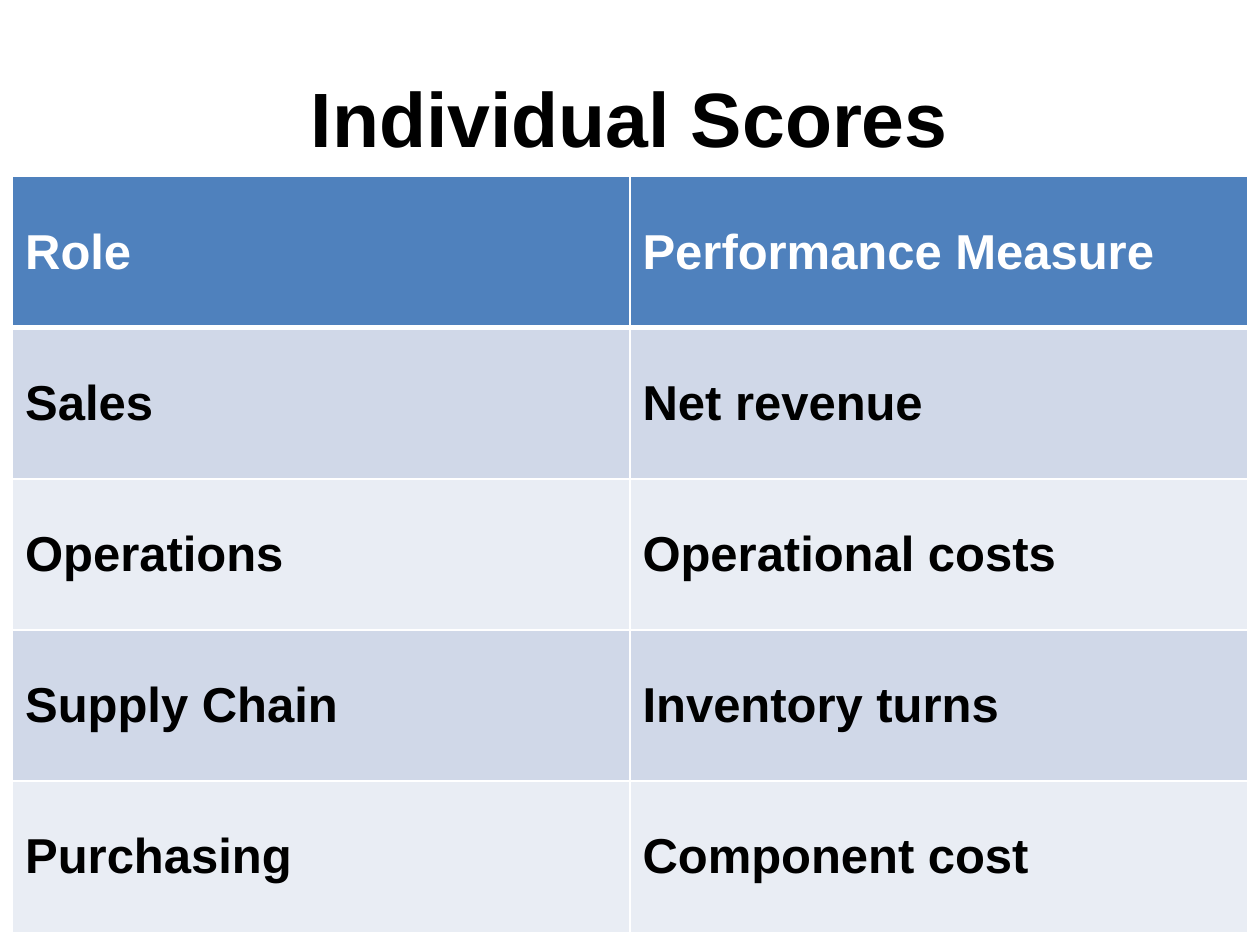
from dataclasses import dataclass

from lxml.etree import SubElement
from pptx import Presentation
from pptx.dml.color import RGBColor
from pptx.enum.text import MSO_ANCHOR, PP_ALIGN
from pptx.oxml.ns import qn
from pptx.util import Inches, Pt

SLIDE_WIDTH, SLIDE_HEIGHT = Inches(10), Inches(7.5)
FONT = "Arial"
WHITE, BLACK = "FFFFFF", "000000"


@dataclass(frozen=True)
class RowStyle:
    fill: str
    text: str
    bottom_border: float = 1
    top_border: float = 1


@dataclass(frozen=True)
class Score:
    role: str
    measure: str


HEADER = RowStyle("4F81BD", WHITE, bottom_border=3)
BANDS = (RowStyle("D0D8E8", BLACK), RowStyle("E9EDF4", BLACK))
SCORES = (
    Score("Role", "Performance Measure"),
    Score("Sales", "Net revenue"),
    Score("Operations", "Operational costs"),
    Score("Supply Chain", "Inventory turns"),
    Score("Purchasing", "Component cost"),
)


def color(hex_string: str) -> RGBColor:
    return RGBColor.from_string(hex_string)


def add_run(paragraph, text: str, size: float, text_color: str) -> None:
    run = paragraph.add_run()
    run.text = text
    run.font.name = FONT
    run.font.size = Pt(size)
    run.font.bold = True
    run.font.color.rgb = color(text_color)


def set_borders(cell, top: float, bottom: float) -> None:
    properties = cell._tc.get_or_add_tcPr()
    for side, width in (("L", 1), ("R", 1), ("T", top), ("B", bottom)):
        line = SubElement(properties, qn(f"a:ln{side}"), w=str(int(Pt(width))))
        fill = SubElement(line, qn("a:solidFill"))
        SubElement(fill, qn("a:srgbClr"), val=WHITE)


def fill_cell(cell, text: str, style: RowStyle, top: float) -> None:
    set_borders(cell, top, style.bottom_border)
    cell.fill.solid()
    cell.fill.fore_color.rgb = color(style.fill)
    cell.vertical_anchor = MSO_ANCHOR.MIDDLE
    add_run(cell.text_frame.paragraphs[0], text, 28, style.text)


def add_heading(slide, text: str) -> None:
    heading = slide.shapes.title
    heading.left, heading.top = int(SLIDE_WIDTH * 0.05), int(SLIDE_HEIGHT * 0.04)
    heading.width, heading.height = int(SLIDE_WIDTH * 0.9), Inches(1.25)
    heading.text_frame.vertical_anchor = MSO_ANCHOR.MIDDLE
    paragraph = heading.text_frame.paragraphs[0]
    paragraph.alignment = PP_ALIGN.CENTER
    add_run(paragraph, text, 44, BLACK)


def add_scores(slide) -> None:
    margin = int(SLIDE_WIDTH * 0.01)
    scores = slide.shapes.add_table(
        len(SCORES), 2, margin, Inches(1.4),
        SLIDE_WIDTH - 2 * margin, int(SLIDE_HEIGHT * 0.8),
    ).table
    top = HEADER.top_border
    for row, score in enumerate(SCORES):
        style = BANDS[(row - 1) % len(BANDS)] if row else HEADER
        for column, text in enumerate((score.role, score.measure)):
            fill_cell(scores.cell(row, column), text, style, top)
        # Neighbouring rows share one border
        top = style.bottom_border


def main() -> None:
    deck = Presentation()
    deck.slide_width, deck.slide_height = SLIDE_WIDTH, SLIDE_HEIGHT
    slide = deck.slides.add_slide(deck.slide_layouts[5])
    slide.background.fill.solid()
    slide.background.fill.fore_color.rgb = color(WHITE)

    # Title
    add_heading(slide, "Individual Scores")
    # Table of roles and measures
    add_scores(slide)
    deck.save("out.pptx")


if __name__ == "__main__":
    main()
